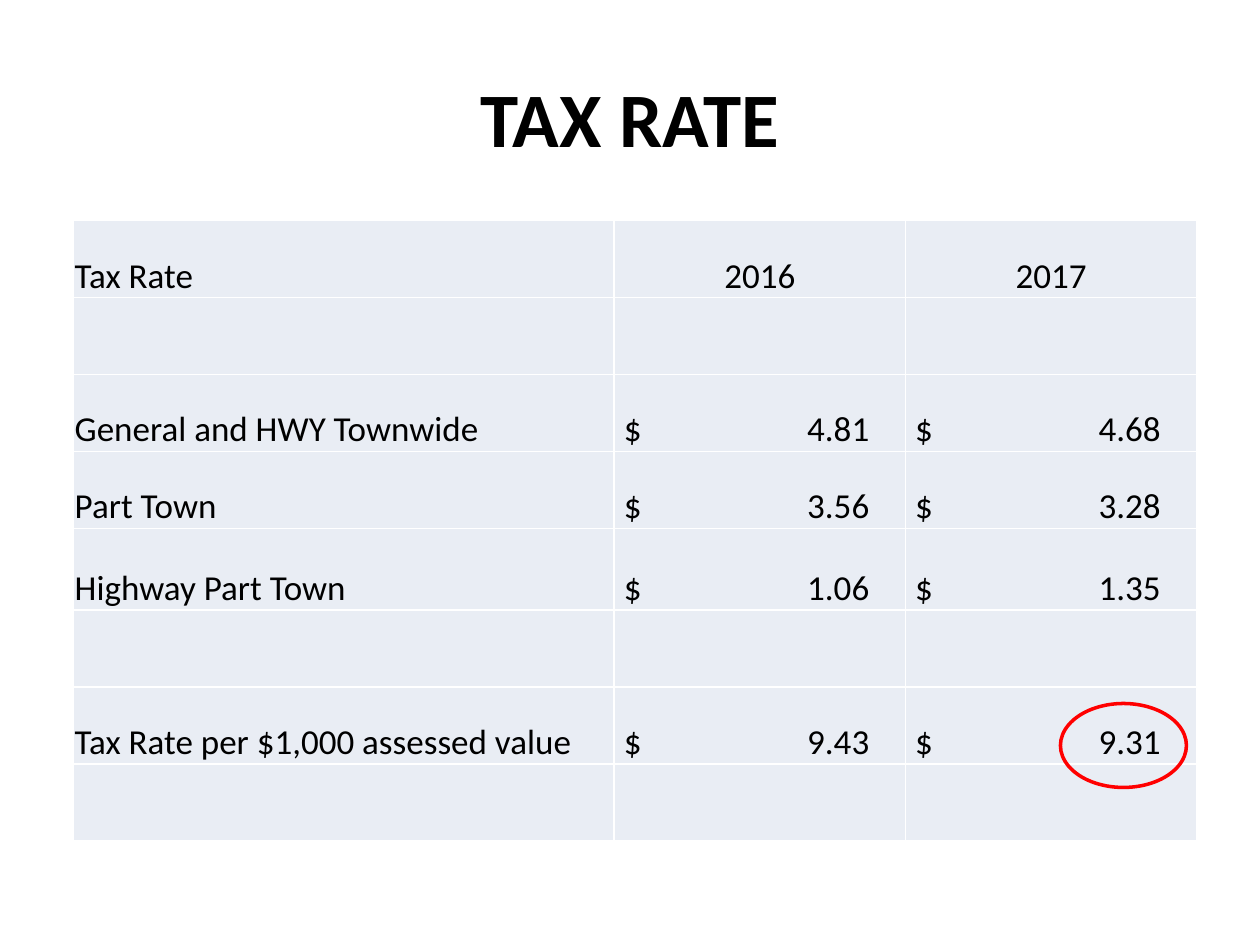
from lxml import etree
from pptx import Presentation
from pptx.dml.color import RGBColor
from pptx.enum.shapes import MSO_SHAPE
from pptx.enum.text import MSO_ANCHOR, PP_ALIGN
from pptx.oxml.ns import qn
from pptx.util import Pt

LEFT, CENTER = PP_ALIGN.LEFT, PP_ALIGN.CENTER
MIDDLE, BOTTOM = MSO_ANCHOR.MIDDLE, MSO_ANCHOR.BOTTOM
OVAL = MSO_SHAPE.OVAL
COLORS = {"text": "000000", "cell": "E9EDF4", "border": "FFFFFF", "mark": "FF0000"}
TITLE_FONT = {"name": "Calibri", "size": Pt(44), "bold": True}
CELL_FONT = {"name": "Calibri", "size": Pt(20), "bold": False}
CELL_MARGINS = {"margin_left": Pt(0.7), "margin_right": Pt(0.7),
                "margin_top": Pt(0.7), "margin_bottom": Pt(0)}
AMOUNT_INDENT, AMOUNT_TAB = Pt(5.5), Pt(140.3)
COLUMN_WIDTHS = [309, 166.5, 166.5]
ROW_HEIGHTS = [44] * 4 + [46.5] + [44] * 3
TAX_RATES = [
    ("Tax Rate", "2016", "2017"),
    (),
    ("General and HWY Townwide", 4.81, 4.68),
    ("Part Town", 3.56, 3.28),
    ("Highway Part Town", 1.06, 1.35),
    (),
    ("Tax Rate per $1,000 assessed value", 9.43, 9.31),
    (),
]


def color(key):
    return RGBColor.from_string(COLORS[key])


def set_all(target, values):
    for name, value in values.items():
        setattr(target, name, value)


class SlideBuilder:
    def __init__(self, prs):
        self.s = prs.slides.add_slide(prs.slide_layouts[5])

    def add_text(self, p, text, font, align):
        p.alignment = align
        r = p.add_run()
        r.text = text
        set_all(r.font, font)
        r.font.color.rgb = color("text")

    def title(self, text, left, top, width, height):
        sp = self.s.shapes.title
        set_all(sp, {"left": Pt(left), "top": Pt(top),
                     "width": Pt(width), "height": Pt(height)})
        sp.text_frame.vertical_anchor = MIDDLE
        self.add_text(sp.text_frame.paragraphs[0], text, TITLE_FONT, CENTER)

    def borders(self, cell):
        tc_pr = cell._tc.get_or_add_tcPr()
        for side in ("lnL", "lnR", "lnT", "lnB"):
            line = etree.SubElement(tc_pr, qn("a:" + side), w=str(Pt(1)))
            fill = etree.SubElement(line, qn("a:solidFill"))
            etree.SubElement(fill, qn("a:srgbClr"), val=COLORS["border"])

    def amount(self, cell, value):
        p = cell.text_frame.paragraphs[0]
        cell.margin_left = AMOUNT_INDENT
        self.add_text(p, f"$\t{value:.2f}", CELL_FONT, LEFT)
        tabs = etree.SubElement(p._p.get_or_add_pPr(), qn("a:tabLst"))
        etree.SubElement(tabs, qn("a:tab"), pos=str(AMOUNT_TAB), algn="r")

    def table(self, rows, left, top):
        frame = self.s.shapes.add_table(
            len(rows), len(COLUMN_WIDTHS), Pt(left), Pt(top),
            Pt(sum(COLUMN_WIDTHS)), Pt(sum(ROW_HEIGHTS)))
        table = frame.table
        set_all(table, {"first_row": False, "horz_banding": False})
        for column, width in zip(table.columns, COLUMN_WIDTHS):
            column.width = Pt(width)
        for row, height in zip(table.rows, ROW_HEIGHTS):
            row.height = Pt(height)
        for cell in table.iter_cells():
            self.borders(cell)
            cell.fill.solid()
            cell.fill.fore_color.rgb = color("cell")
            set_all(cell, CELL_MARGINS)
            cell.vertical_anchor = BOTTOM
        for i, values in enumerate(rows):
            for j, value in enumerate(values):
                cell = table.cell(i, j)
                if isinstance(value, float):
                    self.amount(cell, value)
                else:
                    self.add_text(cell.text_frame.paragraphs[0], value, CELL_FONT,
                                  CENTER if j else LEFT)

    def ring(self, left, top, width, height):
        sp = self.s.shapes.add_shape(OVAL, Pt(left), Pt(top), Pt(width), Pt(height))
        sp.shadow.inherit = False
        sp.fill.background()
        sp.line.color.rgb = color("mark")
        sp.line.width = Pt(2)


def main():
    prs = Presentation()
    prs.slide_width, prs.slide_height = Pt(720), Pt(540)
    slide = SlideBuilder(prs)
    slide.title("TAX RATE", 36, 21.6, 648, 90)
    slide.table(TAX_RATES, 42, 126)
    slide.ring(606, 402, 72, 48)
    prs.save("out.pptx")


if __name__ == "__main__":
    main()
